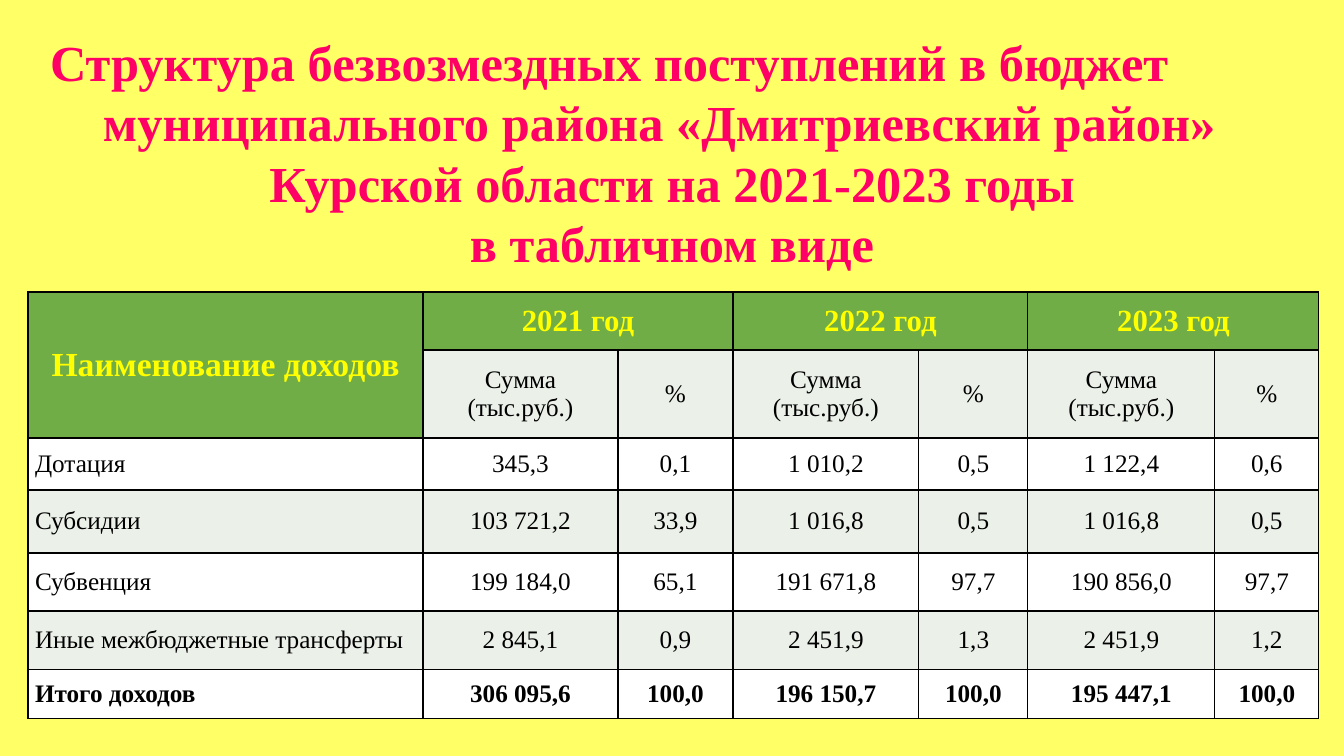
from lxml import etree
from pptx import Presentation
from pptx.dml.color import RGBColor
from pptx.enum.text import MSO_ANCHOR, PP_ALIGN
from pptx.oxml.ns import qn
from pptx.util import Pt

PX = 914400 / 100.8
FONT = "Times New Roman"
YELLOW_BACKGROUND = RGBColor(0xFF, 0xFF, 0x66)
PINK = RGBColor(0xFF, 0x00, 0x66)
GREEN = RGBColor(0x70, 0xAD, 0x47)
YELLOW = RGBColor(0xFF, 0xFF, 0x00)
PALE = RGBColor(0xEB, 0xF1, 0xE9)
WHITE = RGBColor(0xFF, 0xFF, 0xFF)
BLACK = RGBColor(0x00, 0x00, 0x00)
LEFT, CENTER = PP_ALIGN.LEFT, PP_ALIGN.CENTER
MIDDLE = MSO_ANCHOR.MIDDLE

# Text, alignment and left indent of each title line
TITLE_LINES = [
    ("Структура безвозмездных поступлений в бюджет", LEFT, 50),
    ("муниципального района «Дмитриевский район»", LEFT, 103),
    ("Курской области на 2021-2023 годы", CENTER, 0),
    ("в табличном виде", CENTER, 0),
]
COLUMN_WIDTHS = [395, 195, 115, 186, 109, 187, 104]
ROW_HEIGHTS = [58, 88, 52, 63, 58, 59, 49]
ROWS = [
    ["Наименование доходов", "2021 год", "", "2022 год", "", "2023 год", ""],
    [""] + ["Сумма (тыс.руб.)", "%"] * 3,
    ["Дотация", "345,3", "0,1", "1 010,2", "0,5", "1 122,4", "0,6"],
    ["Субсидии", "103 721,2", "33,9", "1 016,8", "0,5", "1 016,8", "0,5"],
    ["Субвенция", "199 184,0", "65,1", "191 671,8", "97,7", "190 856,0", "97,7"],
    ["Иные межбюджетные трансферты", "2 845,1", "0,9", "2 451,9", "1,3", "2 451,9", "1,2"],
    ["Итого доходов", "306 095,6", "100,0", "196 150,7", "100,0", "195 447,1", "100,0"],
]


def px(length):
    return round(length * PX)


def add_borders(cell):
    properties = cell._tc.get_or_add_tcPr()
    for position, side in enumerate(("a:lnL", "a:lnR", "a:lnT", "a:lnB")):
        line = etree.Element(qn(side), w=str(Pt(1)))
        fill = etree.SubElement(line, qn("a:solidFill"))
        etree.SubElement(fill, qn("a:srgbClr"), val=str(BLACK))
        properties.insert(position, line)


presentation = Presentation()
presentation.slide_width = px(1344)
presentation.slide_height = px(756)
slide = presentation.slides.add_slide(presentation.slide_layouts[6])
slide.background.fill.solid()
slide.background.fill.fore_color.rgb = YELLOW_BACKGROUND

title = slide.shapes.add_textbox(0, px(24), px(1344), px(256))
title_frame = title.text_frame
title_frame.word_wrap = True
title_frame.vertical_anchor = MIDDLE
title_frame.margin_left = title_frame.margin_right = 0
title_frame.text = "\n".join(text for text, _, _ in TITLE_LINES)
for paragraph, (_, alignment, indent) in zip(title_frame.paragraphs, TITLE_LINES):
    paragraph.alignment = alignment
    paragraph.line_spacing = Pt(43.2)
    paragraph._p.get_or_add_pPr().set("marL", str(px(indent)))
    font = paragraph.runs[0].font
    font.name, font.size, font.bold = FONT, Pt(36), True
    font.color.rgb = PINK

table = slide.shapes.add_table(
    len(ROWS), len(COLUMN_WIDTHS), px(28), px(292),
    px(sum(COLUMN_WIDTHS)), px(sum(ROW_HEIGHTS))).table
for column, width in zip(table.columns, COLUMN_WIDTHS):
    column.width = px(width)
for row, height in zip(table.rows, ROW_HEIGHTS):
    row.height = px(height)

for row_index, texts in enumerate(ROWS):
    for column_index, text in enumerate(texts):
        cell = table.cell(row_index, column_index)
        is_header = row_index == 0 or (row_index == 1 and column_index == 0)
        cell.fill.solid()
        cell.fill.fore_color.rgb = GREEN if is_header else PALE if row_index % 2 else WHITE
        add_borders(cell)
        cell.vertical_anchor = MIDDLE
        if row_index >= 2:
            cell.margin_left = cell.margin_right = px(7)
            cell.margin_top = cell.margin_bottom = 0
        cell.text = text
        paragraph = cell.text_frame.paragraphs[0]
        paragraph.alignment = LEFT if row_index >= 2 and column_index == 0 else CENTER
        for run in paragraph.runs:
            font = run.font
            font.name = FONT
            font.size = Pt(18 if not is_header else 24 if column_index == 0 else 22)
            font.bold = is_header or row_index == len(ROWS) - 1
            font.color.rgb = YELLOW if is_header else BLACK

table.cell(0, 0).merge(table.cell(1, 0))
for first_column in (1, 3, 5):
    table.cell(0, first_column).merge(table.cell(0, first_column + 1))

presentation.save("out.pptx")
